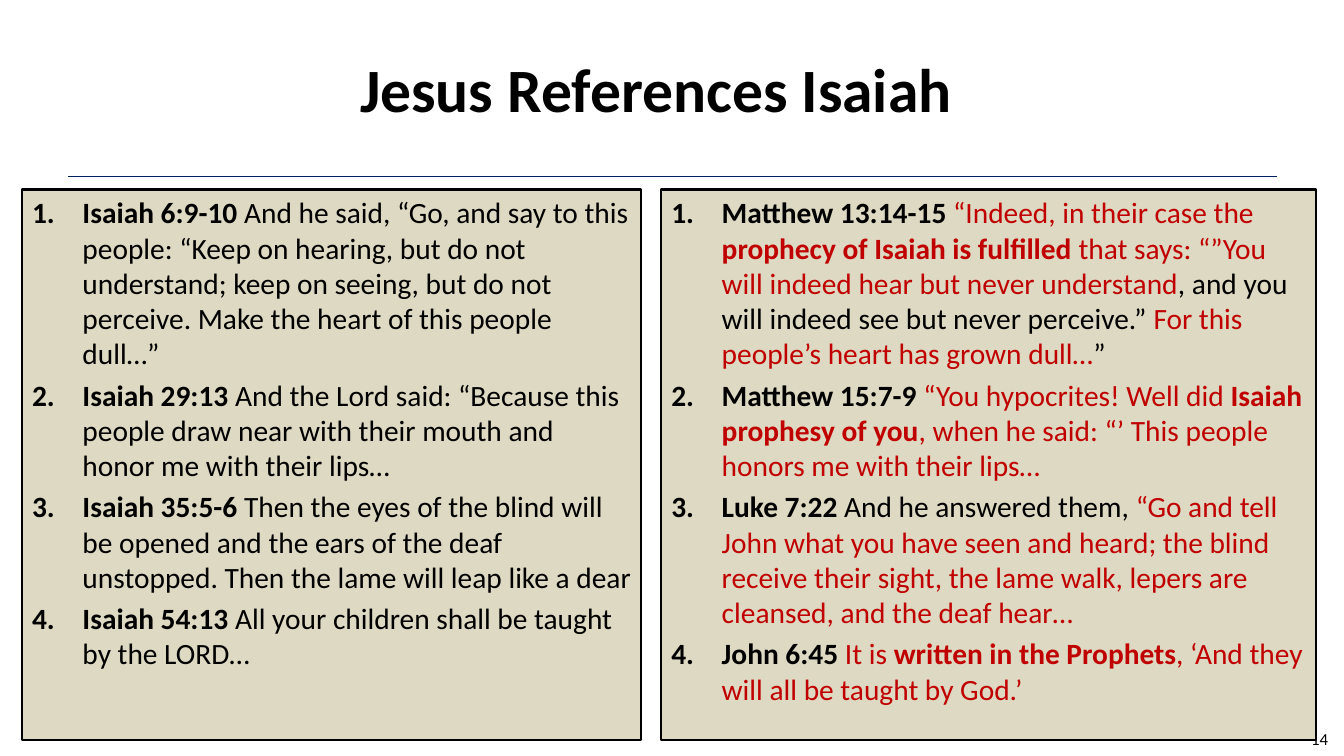
from lxml.etree import SubElement
from pptx import Presentation
from pptx.dml.color import RGBColor
from pptx.enum.shapes import MSO_CONNECTOR as Connector, MSO_SHAPE as Shape
from pptx.enum.text import MSO_ANCHOR as Anchor, PP_ALIGN as Align
from pptx.oxml.ns import qn
from pptx.util import Inches, Pt

BLACK, RED, NAVY, TAN = "000000", "C00000", "002060", "DDD9C3"

# Run styles: (colour, bold)
PLAIN, BOLD = (BLACK, False), (BLACK, True)
QUOTE, STRONG = (RED, False), (RED, True)

ISAIAH = [
    [("Isaiah 6:9-10 ", BOLD),
     ("And he said, “Go, and say to this people: “Keep on hearing, but do not understand; "
      "keep on seeing, but do not perceive. Make the heart of this people dull…”", PLAIN)],
    [("Isaiah 29:13 ", BOLD),
     ("And the Lord said: “Because this people draw near with their mouth and "
      "honor me with their lips…", PLAIN)],
    [("Isaiah 35:5-6 ", BOLD),
     ("Then the eyes of the blind will be opened and the ears of the deaf unstopped. "
      "Then the lame will leap like a dear", PLAIN)],
    [("Isaiah 54:13 ", BOLD),
     ("All your children shall be taught by the LORD…", PLAIN)],
]

GOSPELS = [
    [("Matthew 13:14-15 ", BOLD),
     ("“Indeed, in their case the ", QUOTE),
     ("prophecy of Isaiah is fulfilled ", STRONG),
     ("that says: “”You will indeed hear but never understand", QUOTE),
     (", and you will indeed see but never perceive.” ", PLAIN),
     ("For this people’s heart has grown dull…", QUOTE),
     ("”", PLAIN)],
    [("Matthew 15:7-9 ", BOLD),
     ("“You hypocrites! Well did ", QUOTE),
     ("Isaiah prophesy of you", STRONG),
     (", when he said: “’ This people honors me with their lips…", QUOTE)],
    [("Luke 7:22", BOLD),
     (" And he answered them, ", PLAIN),
     ("“Go and tell John what you have seen and heard; the blind receive their sight, "
      "the lame walk, lepers are cleansed, and the deaf hear…", QUOTE)],
    [("John 6:45 ", BOLD),
     ("It is ", QUOTE),
     ("written in the Prophets", STRONG),
     (", ‘And they will all be taught by God.’", QUOTE)],
]


def color(value):
    return RGBColor.from_string(value)


class SlideBuilder:
    font_name = "Calibri"
    list_size = 21

    def __init__(self, slide):
        self.slide = slide

    def style(self, font, size, value=BLACK, bold=False):
        font.name = self.font_name
        font.size = Pt(size)
        font.bold = bold
        font.color.rgb = color(value)

    def text(self, box, text, size, align, bold=False):
        shape = self.slide.shapes.add_textbox(*map(Inches, box))
        text_frame = shape.text_frame
        text_frame.word_wrap = True
        text_frame.vertical_anchor = Anchor.MIDDLE
        text_frame.text = text
        paragraph = text_frame.paragraphs[0]
        paragraph.alignment = align
        self.style(paragraph.runs[0].font, size, bold=bold)

    def rule(self, left, right, top):
        line = self.slide.shapes.add_connector(
            Connector.STRAIGHT, Inches(left), Inches(top), Inches(right), Inches(top))
        line.line.color.rgb = color(NAVY)
        line.line.width = Pt(0.75)
        SubElement(line.element.spPr, qn("a:effectLst"))

    def number(self, paragraph):
        properties = paragraph._p.get_or_add_pPr()
        properties.set("marL", str(Inches(0.5)))
        properties.set("indent", str(Inches(-0.5)))
        SubElement(properties, qn("a:buFont"), typeface="+mj-lt")
        SubElement(properties, qn("a:buAutoNum"), type="arabicPeriod")

    def panel(self, box, verses):
        shape = self.slide.shapes.add_shape(Shape.RECTANGLE, *map(Inches, box))
        shape.shadow.inherit = False
        shape.fill.solid()
        shape.fill.fore_color.rgb = color(TAN)
        shape.line.color.rgb = color(BLACK)
        shape.line.width = Pt(1.5)
        text_frame = shape.text_frame
        text_frame.word_wrap = True
        text_frame.vertical_anchor = Anchor.TOP
        text_frame.text = "\n".join("" for _ in verses)
        for index, (paragraph, verse) in enumerate(zip(text_frame.paragraphs, verses)):
            self.number(paragraph)
            paragraph.alignment = Align.LEFT
            paragraph.space_before = Pt(0.2 * self.list_size if index else 0)
            for text, (value, bold) in verse:
                run = paragraph.add_run()
                run.text = text
                self.style(run.font, self.list_size, value, bold)


def main():
    presentation = Presentation()
    presentation.slide_width = Inches(13.33)
    presentation.slide_height = Inches(7.5)
    builder = SlideBuilder(presentation.slides.add_slide(presentation.slide_layouts[6]))

    # Title, slide number and rule
    builder.text((0.51, 0.25, 12, 1.25), "Jesus References Isaiah", 44, Align.CENTER, bold=True)
    builder.text((12.27, 7.13, 1, 0.4), "14", 12, Align.RIGHT)
    builder.rule(0.67, 12.67, 1.75)

    # Prophecies and the passages that cite them
    builder.panel((0.22, 1.88, 6.14, 5.46), ISAIAH)
    builder.panel((6.56, 1.88, 6.49, 5.46), GOSPELS)

    presentation.save("out.pptx")


if __name__ == "__main__":
    main()
